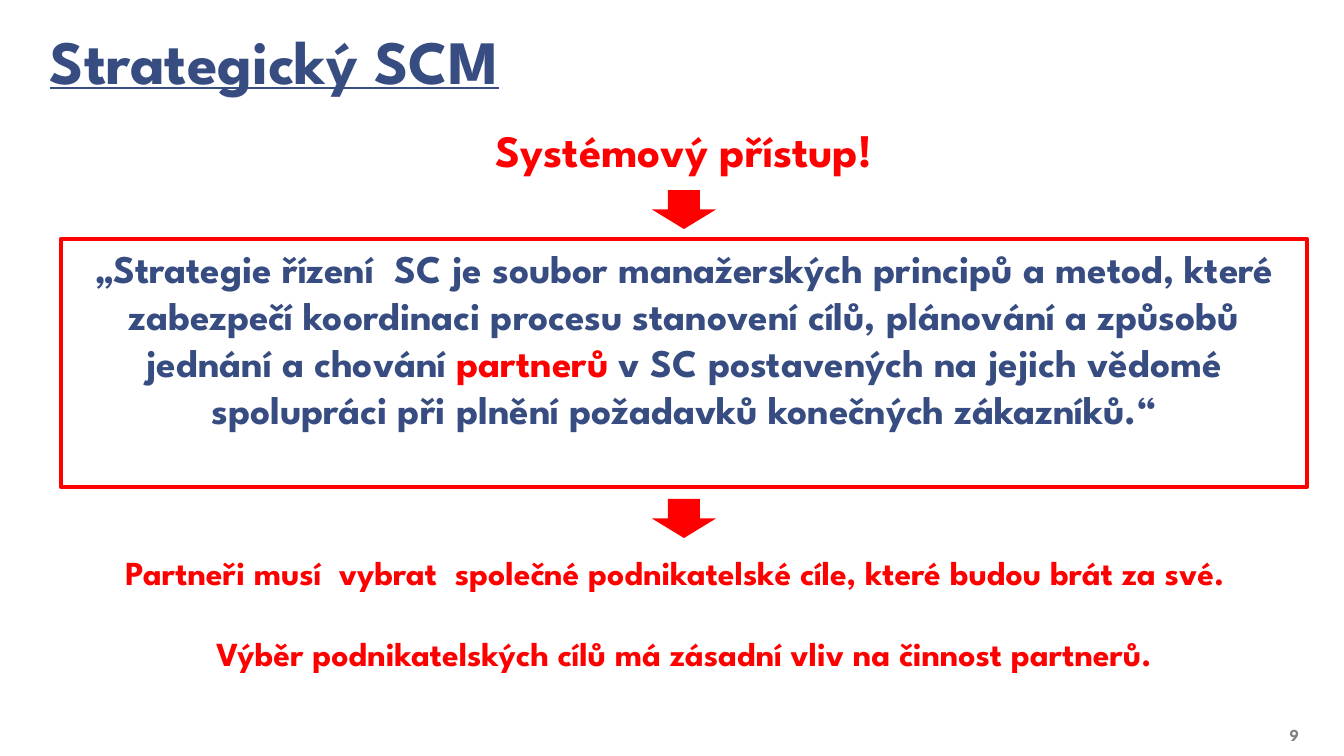
from pptx import Presentation
from pptx.dml.color import RGBColor
from pptx.enum.shapes import MSO_SHAPE as Kind
from pptx.enum.text import MSO_ANCHOR as Anchor, PP_ALIGN as Align
from pptx.util import Pt

# Content: a paragraph is a list of (text, colour) runs
NAVY = RGBColor(0x37, 0x4C, 0x81)
RED = RGBColor(0xFF, 0x00, 0x00)
GREY = RGBColor(0x7F, 0x7F, 0x7F)
FONT = "League Spartan"

TITLE = [[("Strategický SCM", NAVY)]]
LEAD = [[("Systémový přístup!", RED)]]
QUOTE = [[
    ("„Strategie řízení  SC je soubor manažerských principů a metod, které "
     "zabezpečí koordinaci procesu stanovení cílů, plánování a způsobů "
     "jednání a chování ", NAVY),
    ("partnerů", RED),
    (" v SC postavených na jejich vědomé spolupráci při plnění požadavků "
     "konečných zákazníků.“", NAVY),
]]
GOALS = [
    [("Partneři musí  vybrat  společné podnikatelské cíle, "
      "které budou brát za své.  ", RED)],
    [("Výběr podnikatelských cílů má zásadní vliv na činnost partnerů.", RED)],
]
PAGE = [[("9", GREY)]]

# Layout in px
UNIT = 914400 / 100.8
WIDE, HIGH = 1344, 756
MID = 684
FRAME_TOP, FRAME_HIGH = 239, 248
ARROW_WIDE, ARROW_HIGH = 64, 39
ARROW_TOPS = (190, 499)


def px(*nums):
    return [round(n * UNIT) for n in nums]


def centred(top, wide, high):
    return MID - wide // 2, top, wide, high


prs = Presentation()
prs.slide_width, prs.slide_height = px(WIDE, HIGH)
slide = prs.slides.add_slide(prs.slide_layouts[6])


def add_text(paras, at, size, align=Align.CENTER, anchor=Anchor.TOP,
             inset=(10, 5), line=None, gap=0, under=None):
    frame = slide.shapes.add_textbox(*px(*at)).text_frame
    frame.word_wrap = True
    frame.vertical_anchor = anchor
    side, edge = px(*inset)
    frame.margin_left = frame.margin_right = side
    frame.margin_top = frame.margin_bottom = edge
    for i, runs in enumerate(paras):
        para = frame.add_paragraph() if i else frame.paragraphs[0]
        para.alignment = align
        if line:
            para.line_spacing = line
        if i and gap:
            para.space_before = Pt(gap)
        for text, color in runs:
            run = para.add_run()
            run.text = text
            font = run.font
            font.name, font.size, font.bold = FONT, Pt(size), True
            font.underline = under
            font.color.rgb = color


def add_shape(kind, at):
    shape = slide.shapes.add_shape(kind, *px(*at))
    shape.shadow.inherit = False
    return shape


# Title and page number
add_text(TITLE, (37, -50, 1120, 154), 44, align=Align.LEFT,
         anchor=Anchor.BOTTOM, inset=(13, 7), line=0.85, under=True)
add_text(PAGE, (1190, 717, 122, 35), 12, align=Align.RIGHT,
         anchor=Anchor.BOTTOM, inset=(13, 7))

# Lead, framed quote and goals
add_text(LEAD, centred(118, 424, 65), 32)
add_text(QUOTE, centred(FRAME_TOP, 1198, FRAME_HIGH), 28)
box = add_shape(Kind.RECTANGLE, centred(FRAME_TOP, 1246, FRAME_HIGH))
box.fill.background()
box.line.color.rgb = RED
box.line.width = Pt(3)
add_text(GOALS, centred(547, 1258, 132), 24, gap=29)

# Arrows between the steps
for top in ARROW_TOPS:
    arrow = add_shape(Kind.DOWN_ARROW, centred(top, ARROW_WIDE, ARROW_HIGH))
    arrow.fill.solid()
    arrow.fill.fore_color.rgb = RED
    arrow.line.fill.background()

prs.save("out.pptx")
